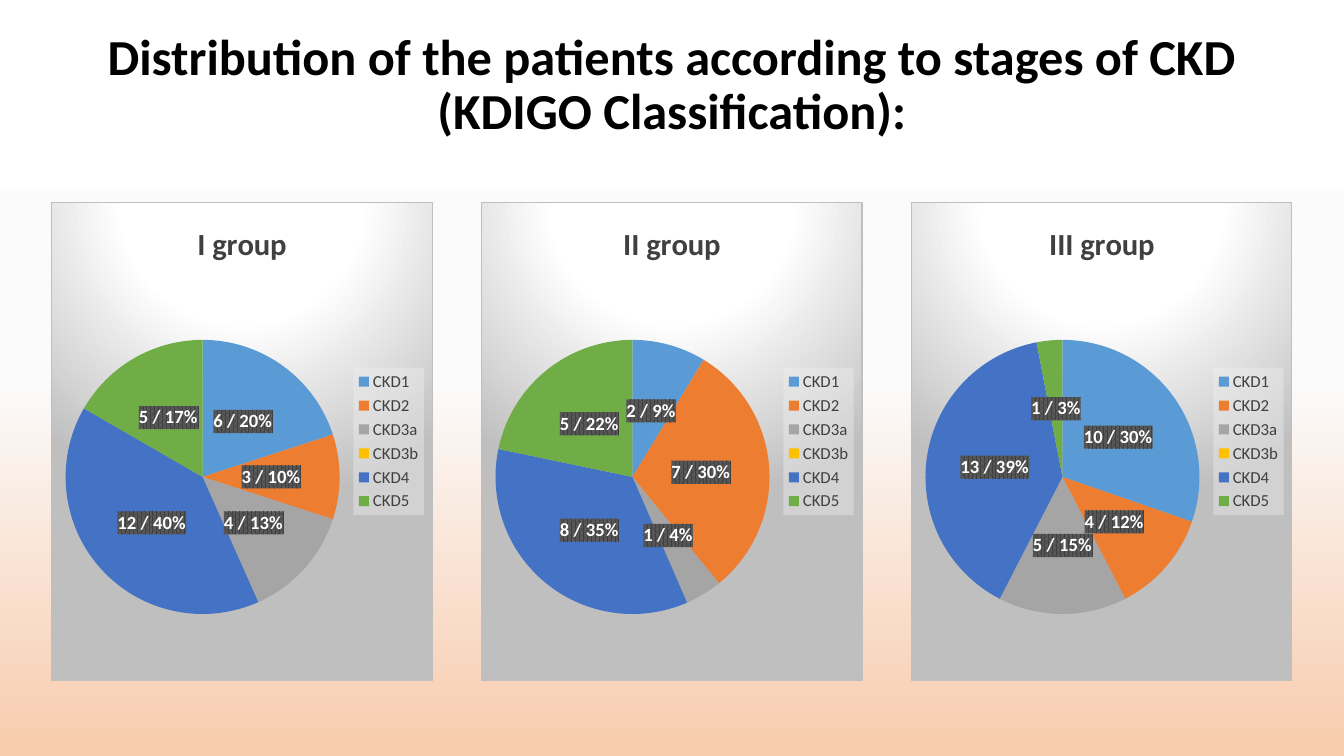
from lxml import etree
from pptx import Presentation
from pptx.chart.data import CategoryChartData
from pptx.dml.color import RGBColor
from pptx.enum.chart import XL_CHART_TYPE as ChartType
from pptx.enum.chart import XL_LABEL_POSITION as LabelPosition
from pptx.enum.chart import XL_LEGEND_POSITION as LegendPosition
from pptx.enum.text import MSO_ANCHOR as Anchor
from pptx.enum.text import PP_ALIGN as Align
from pptx.oxml import parse_xml
from pptx.oxml.ns import qn
from pptx.util import Pt

COLORS = {
    "black": "000000", "white": "FFFFFF", "paper": "FBFBFB", "peach": "F8CBAD",
    "grey": "BFBFBF", "text": "404040", "label": "595959", "legend": "F2F2F2",
}
STAGE_COLORS = {
    "CKD1": "5B9BD5", "CKD2": "ED7D31", "CKD3a": "A5A5A5",
    "CKD3b": "FFC000", "CKD4": "4472C4", "CKD5": "70AD47",
}
GROUPS = [
    ("I group", "I group", (6, 3, 4, None, 12, 5)),
    ("II group", "Series 1", (2, 7, 1, None, 8, 5)),
    ("III group", "III group", (10, 4, 5, None, 13, 1)),
]
NAMESPACES = (
    'xmlns:a="http://schemas.openxmlformats.org/drawingml/2006/main" '
    'xmlns:c="http://schemas.openxmlformats.org/drawingml/2006/chart"'
)


def color_xml(name, inner=""):
    return f'<a:srgbClr val="{COLORS[name]}">{inner}</a:srgbClr>'


def gradient_xml(stops, direction):
    marks = "".join(
        f'<a:gs pos="{percent * 1000}">{color_xml(name)}</a:gs>' for percent, name in stops
    )
    return f'<a:gradFill {NAMESPACES} rotWithShape="1"><a:gsLst>{marks}</a:gsLst>{direction}</a:gradFill>'


def chart_style(content):
    return parse_xml(f"<c:spPr {NAMESPACES}>{content}</c:spPr>")


class SlideBuilder:
    """Holds the text style and the current slide."""

    def __init__(self, page, font="Calibri"):
        self.page = page
        self.font = font

    def style(self, font, size, color, bold=False):
        font.name, font.size, font.bold = self.font, Pt(size), bold
        font.color.rgb = RGBColor.from_string(COLORS[color])

    def background(self, stops):
        fill = self.page.background.fill
        fill.solid()
        solid = next(self.page.element.iter(qn("a:solidFill")))
        gradient = parse_xml(gradient_xml(stops, '<a:lin ang="5400000" scaled="0"/>'))
        solid.getparent().replace(solid, gradient)

    def title(self, text, left, top, width, height):
        box = self.page.shapes.add_textbox(Pt(left), Pt(top), Pt(width), Pt(height))
        frame = box.text_frame
        frame.word_wrap = True
        frame.vertical_anchor = Anchor.MIDDLE
        frame.margin_bottom = Pt(42)
        frame.text = text
        para = frame.paragraphs[0]
        para.alignment = Align.CENTER
        para.line_spacing = 0.9
        self.style(para.runs[0].font, 36, "black", bold=True)

    def pie(self, heading, series_name, values, left, top, width, height):
        data = CategoryChartData()
        data.categories = list(STAGE_COLORS)
        data.add_series(series_name, values)
        frame = self.page.shapes.add_chart(
            ChartType.PIE, Pt(left), Pt(top), Pt(width), Pt(height), data
        )
        chart = frame.chart
        self.style(chart.font, 10, "black")

        # Heading
        chart.has_title = True
        chart.chart_title.include_in_layout = False
        heading_frame = chart.chart_title.text_frame
        heading_frame.text = heading
        self.style(heading_frame.paragraphs[0].runs[0].font, 22, "text", bold=True)

        self.panel(chart)
        self.legend(chart)
        self.slices(chart.plots[0])

    def panel(self, chart):
        glow = gradient_xml(
            [(0, "white"), (39, "white"), (100, "grey")],
            '<a:path path="circle"><a:fillToRect l="50000" t="-80000" r="50000" b="180000"/></a:path>',
        )
        border = f'<a:ln w="{Pt(0.75)}"><a:solidFill>{color_xml("grey")}</a:solidFill></a:ln>'
        body = chart.element.find(qn("c:chart"))
        body.addnext(chart_style(glow + border))
        body.addprevious(parse_xml(f'<c:roundedCorners {NAMESPACES} val="0"/>'))

    def legend(self, chart):
        chart.has_legend = True
        legend = chart.legend
        legend.position = LegendPosition.RIGHT
        legend.include_in_layout = False
        self.style(legend.font, 12, "text")
        veil = color_xml("legend", '<a:alpha val="39000"/>')
        overlay = chart.element.find(".//" + qn("c:legend")).find(qn("c:overlay"))
        overlay.addnext(chart_style(f"<a:solidFill>{veil}</a:solidFill>"))

    def slices(self, plot):
        plot.vary_by_categories = True
        series = plot.series[0]
        for index, color in enumerate(STAGE_COLORS.values()):
            fill = series.points[index].format.fill
            fill.solid()
            fill.fore_color.rgb = RGBColor.from_string(color)

        # Labels with value and percentage
        labels = series.data_labels
        labels.show_value = True
        labels.show_percentage = True
        labels.position = LabelPosition.CENTER
        self.style(labels.font, 13.3, "white", bold=True)
        node = next(plot._element.iter(qn("c:dLbls")))
        pattern = (
            f'<a:pattFill prst="pct75"><a:fgClr>{color_xml("text")}</a:fgClr>'
            f'<a:bgClr>{color_xml("label")}</a:bgClr></a:pattFill>'
        )
        node.find(qn("c:txPr")).addprevious(chart_style(pattern))
        separator = etree.Element(qn("c:separator"))
        separator.text = " / "
        last_flag = node.find(qn("c:showBubbleSize"))
        if last_flag is None:
            last_flag = node.find(qn("c:showPercent"))
        last_flag.addnext(separator)


def main():
    deck = Presentation()
    deck.slide_width, deck.slide_height = Pt(960), Pt(540)
    builder = SlideBuilder(deck.slides.add_slide(deck.slide_layouts[6]))

    builder.background([(0, "white"), (50, "paper"), (100, "peach")])
    builder.title(
        "Distribution of the patients according to stages of CKD (KDIGO Classification):",
        66, 28.75, 828, 104.4,
    )

    # One pie per group, evenly spaced
    first_left, step = 36.6, 307.1
    for index, (heading, series_name, values) in enumerate(GROUPS):
        builder.pie(heading, series_name, values, first_left + index * step, 144, 272.4, 342.6)

    deck.save("out.pptx")


if __name__ == "__main__":
    main()
